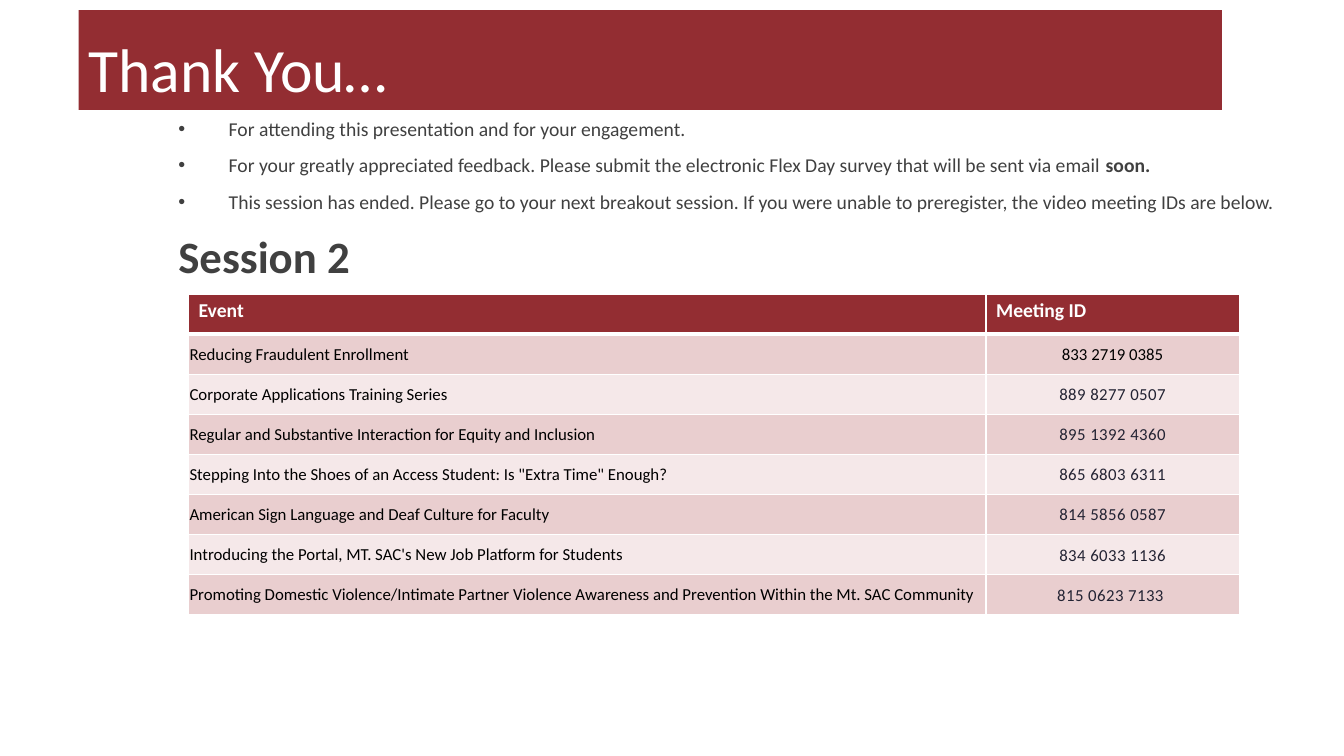
"""Builds a closing slide with thanks, notes and a table of session meeting IDs."""
from lxml import etree
from pptx import Presentation
from pptx import util as u
from pptx.dml.color import RGBColor
from pptx.enum import shapes, text
from pptx.oxml.ns import qn

MAROON = RGBColor(0x93, 0x2D, 0x32)
ROSE = RGBColor(0xE9, 0xCE, 0xCF)
BLUSH = RGBColor(0xF5, 0xE8, 0xE9)
WHITE = RGBColor(0xFF, 0xFF, 0xFF)
BLACK = RGBColor(0, 0, 0)
INK = RGBColor(0x23, 0x23, 0x33)
GREY = RGBColor(0x40, 0x40, 0x40)

NOTES = [
    [("For attending this presentation and for your engagement.", False)],
    [("For your greatly appreciated feedback. Please submit the electronic Flex Day survey "
      "that will be sent via email ", False), ("soon.", True)],
    [("This session has ended. Please go to your next breakout session. If you were unable "
      "to preregister, the video meeting IDs are below.", False)],
]
SESSIONS = [
    ("Event", "Meeting ID"),
    ("Reducing Fraudulent Enrollment", "833 2719 0385"),
    ("Corporate Applications Training Series", "889 8277 0507"),
    ("Regular and Substantive Interaction for Equity and Inclusion", "895 1392 4360"),
    ('Stepping Into the Shoes of an Access Student: Is "Extra Time" Enough?', "865 6803 6311"),
    ("American Sign Language and Deaf Culture for Faculty", "814 5856 0587"),
    ("Introducing the Portal, MT. SAC's New Job Platform for Students", "834 6033 1136"),
    ("Promoting Domestic Violence/Intimate Partner Violence Awareness and Prevention "
     "Within the Mt. SAC Community", "815 0623 7133 "),
]

deck = Presentation()
deck.slide_width, deck.slide_height = u.Inches(13.33), u.Inches(7.5)
page = deck.slides.add_slide(deck.slide_layouts[6])


def place(left, top, width, height):
    """Turn percentages of the slide into lengths."""
    sides = (deck.slide_width, deck.slide_height) * 2
    return [int(side * share / 100) for side, share in zip(sides, (left, top, width, height))]


def add_span(para, words, size, color, bold=False):
    """Append one styled run."""
    span = para.add_run()
    span.text = words
    span.font.name = "Calibri"
    span.font.size = u.Pt(size)
    span.font.bold = bold
    span.font.color.rgb = color
    return span


banner = page.shapes.add_shape(shapes.MSO_SHAPE.RECTANGLE, *place(5.85, 1.33, 85.07, 13.2))
banner.shadow.inherit = False
banner.fill.solid()
banner.fill.fore_color.rgb = MAROON
banner.line.fill.background()
banner.text_frame.vertical_anchor = text.MSO_ANCHOR.BOTTOM
heading = banner.text_frame.paragraphs[0]
heading.alignment = text.PP_ALIGN.LEFT
add_span(heading, "Thank You…", 44, WHITE)

left, top, event_width, row_height = place(14.03, 38.93, 59.34, 5.3)
id_width = place(0, 0, 18.83, 0)[2]
frame = page.shapes.add_table(len(SESSIONS), 2, left, top, event_width + id_width,
                              row_height * len(SESSIONS))
table = frame.table
table.columns[0].width, table.columns[1].width = event_width, id_width
for r, session in enumerate(SESSIONS):
    table.rows[r].height = row_height
    for c, words in enumerate(session):
        cell = table.cell(r, c)
        cell.fill.solid()
        cell.fill.fore_color.rgb = MAROON if r == 0 else ROSE if r % 2 else BLUSH
        para = cell.text_frame.paragraphs[0]
        if r == 0:
            add_span(para, words, 14, WHITE, True)
        else:
            cell.vertical_anchor = text.MSO_ANCHOR.MIDDLE
            inset = u.Inches(0 if c else 0.01)
            cell.margin_left = cell.margin_right = cell.margin_top = inset
            cell.margin_bottom = 0
            span = add_span(para, words, 12, INK if c and r > 1 else BLACK)
            if c:
                para.alignment = text.PP_ALIGN.CENTER
                para.line_spacing = 1.07
                if r > 1:
                    span.font._element.set("spc", "30")
        weights = {"lnL": 1, "lnR": 1, "lnT": 3 if r == 1 else 1, "lnB": 3 if r == 0 else 1}
        for order, (edge, weight) in enumerate(weights.items()):
            border = etree.Element(qn(f"a:{edge}"), w=str(u.Pt(weight)))
            paint = etree.SubElement(border, qn("a:solidFill"))
            etree.SubElement(paint, qn("a:srgbClr"), val=str(WHITE))
            cell._tc.get_or_add_tcPr().insert(order, border)

box = page.shapes.add_textbox(*place(12.53, 14.53, 85.07, 10))
box.text_frame.word_wrap = True
for note in NOTES:
    para = box.text_frame.paragraphs[0] if note is NOTES[0] else box.text_frame.add_paragraph()
    props = para._p.get_or_add_pPr()
    props.set("marL", str(u.Inches(0.5)))
    props.set("indent", str(-u.Inches(0.5)))
    tint = etree.SubElement(props, qn("a:buClr"))
    etree.SubElement(tint, qn("a:srgbClr"), val=str(GREY))
    etree.SubElement(props, qn("a:buFont"), typeface="Arial")
    etree.SubElement(props, qn("a:buChar"), char="•")
    for words, bold in note:
        add_span(para, words, 14, GREY, bold)
add_span(box.text_frame.add_paragraph(), "Session 2", 32, GREY, True)
for para in box.text_frame.paragraphs:
    para.line_spacing = 1.08
    para.space_after = u.Pt(8)

deck.save("out.pptx")
